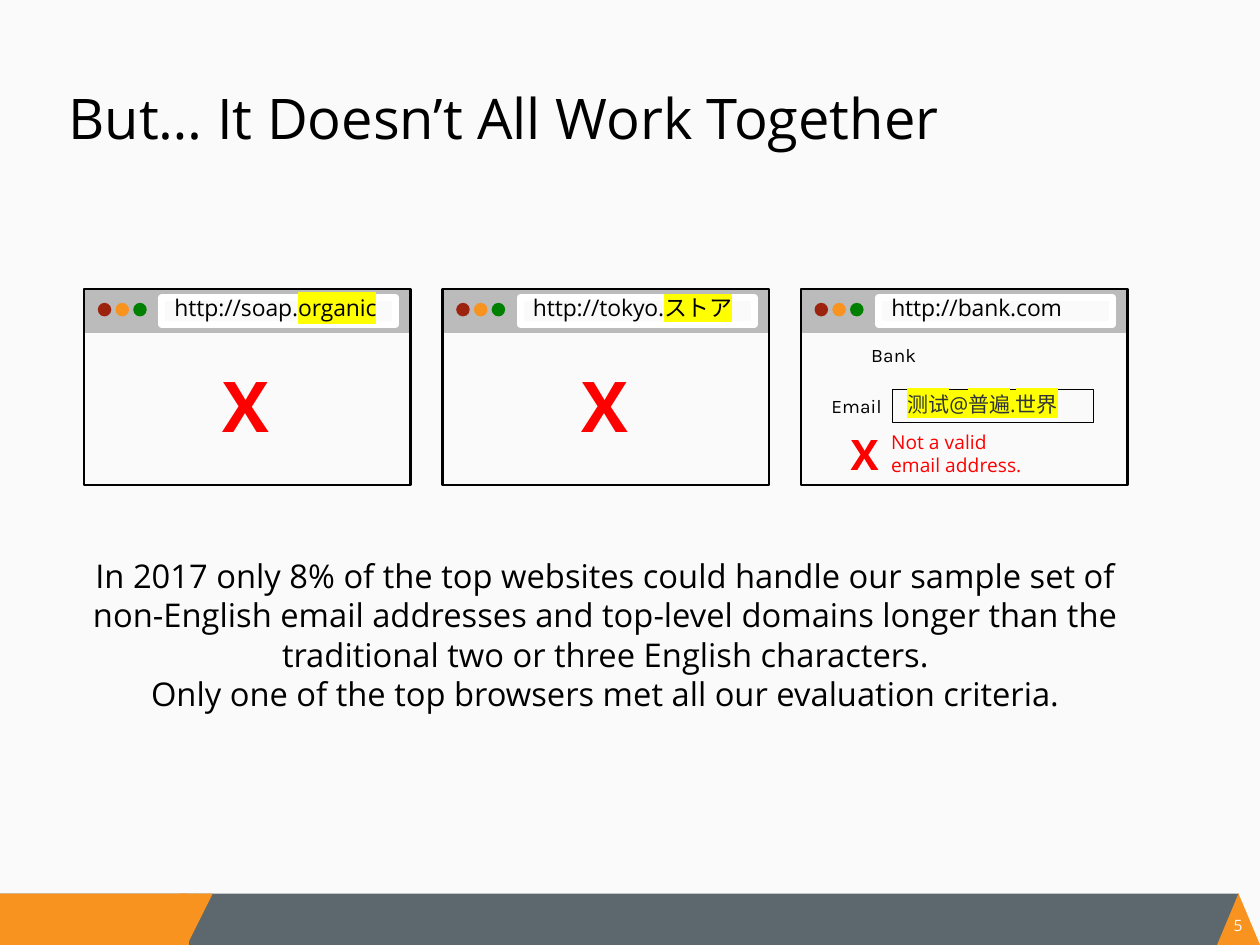
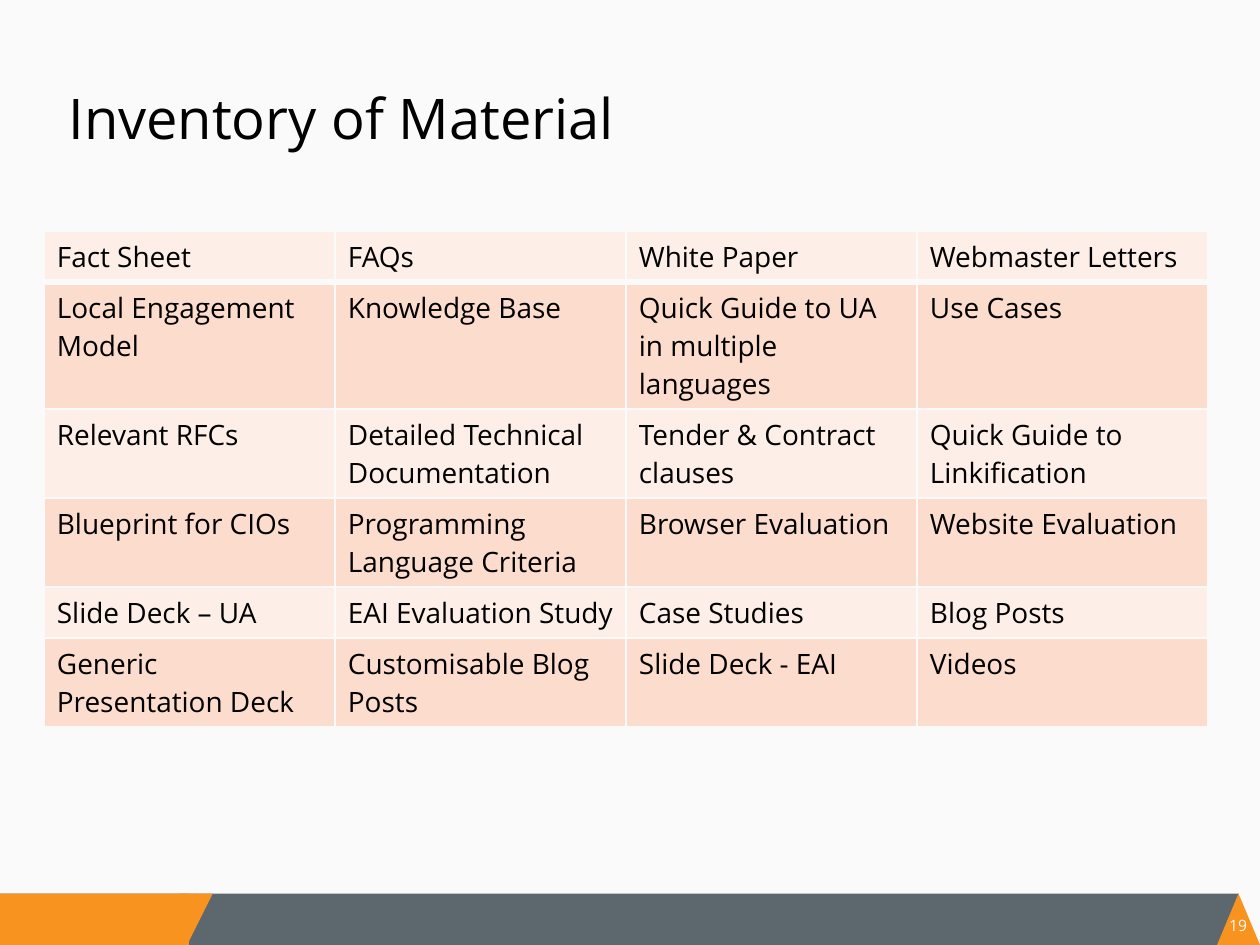
from lxml import etree
from pptx import Presentation, util as u
from pptx.dml.color import RGBColor
from pptx.enum import shapes, text
from pptx.oxml import ns

Pt = u.Pt
Kind = shapes.MSO_SHAPE
Align = text.PP_ALIGN
Anchor = text.MSO_ANCHOR
SANS, KARLA, LATO, CJK = "Open Sans", "Karla", "Lato", "Noto Sans CJK SC"
PALE, GREY, SLATE, ORANGE = "FAFAFA", "BBBBBB", "5D686E", "F7931E"
BLACK, WHITE, RED, MARK = "000000", "FFFFFF", "FF0000", "FFFF00"
FIELD = (5.4, 2.6, 5.4, 5.4)
CROSS = (5.4, 3, 7.2, 3)


def paint(color, code):
    """Set a colour format from a hex string."""
    color.rgb = RGBColor.from_string(code)


def add_hex(parent, tag, code):
    """Append an element that holds one hex colour."""
    node = etree.SubElement(parent, ns.qn(tag))
    etree.SubElement(node, ns.qn("a:srgbClr")).set("val", code)
    return node


def style(run, size, code, font=SANS, bold=False, mark=None):
    """Format one run, with an optional highlight."""
    run.font.size = Pt(size)
    run.font.bold = bold
    paint(run.font.color, code)
    props = run.font._element
    if mark:
        add_hex(props, "a:highlight", mark)
    run.font.name = font
    etree.SubElement(props, ns.qn("a:ea")).set("typeface", font)


def shape(slide, kind, box, fill=None, line=None, width=1):
    """Add a preset shape with plain fill and line."""
    item = slide.shapes.add_shape(kind, *map(Pt, box))
    item.shadow.inherit = False
    if fill:
        item.fill.solid()
        paint(item.fill.fore_color, fill)
    else:
        item.fill.background()
    if line:
        paint(item.line.color, line)
        item.line.width = Pt(width)
    else:
        item.line.fill.background()
    return item


def frame(item, pad, anchor=Anchor.MIDDLE, wrap=True):
    """Set insets, anchor and wrapping, and return the text frame."""
    body = item.text_frame
    body.margin_left, body.margin_top, body.margin_right, body.margin_bottom = map(Pt, pad)
    body.vertical_anchor = anchor
    body.word_wrap = wrap
    return body


def label(slide, box, words, size, code=BLACK, pad=FIELD, anchor=Anchor.MIDDLE,
          wrap=True, align=Align.LEFT, font=SANS, bold=False):
    """Add a text box in one style."""
    body = frame(slide.shapes.add_textbox(*map(Pt, box)), pad, anchor, wrap)
    body.text = words
    for para in body.paragraphs:
        para.alignment = align
        for run in para.runs:
            style(run, size, code, font, bold)


def spell(para, parts, size, code):
    """Fill a paragraph with runs of (words, font, highlight)."""
    para.alignment = Align.LEFT
    for words, font, mark in parts:
        run = para.add_run()
        run.text = words
        style(run, size, code, font, mark=mark)


def footer(slide, page, top=383, high=22):
    """Draw the bottom band and the page number."""
    shape(slide, Kind.RECTANGLE, (0, top, 531, high), SLATE)
    shape(slide, Kind.RECTANGLE, (0, top, 81, high), ORANGE)
    shape(slide, Kind.ISOSCELES_TRIANGLE, (521.6, top, 18.4, high), ORANGE)
    label(slide, (526.3, top + 9.4, 8.6, 8), str(page), 6.75, PALE, (0, 0, 0, 0),
          Anchor.TOP, False, Align.CENTER)
    slant = shape(slide, Kind.PARALLELOGRAM, (72.2, top, 19, high), ORANGE)
    slant.rotation = 180
    slant.adjustments[0] = 0.58
    shape(slide, Kind.RECTANGLE, (77, top, 7.2, 4.3), ORANGE)


def base(deck, title, page):
    """Add a slide with background, footer and title."""
    slide = deck.slides.add_slide(deck.slide_layouts[6])
    fill = slide.background.fill
    fill.solid()
    paint(fill.fore_color, PALE)
    footer(slide, page)
    label(slide, (22.3, 32.2, 499, 67.7), title, 24, pad=(7.2, 3.6, 7.2, 3.6),
          anchor=Anchor.TOP)
    return slide


def window(slide, box, parts):
    """Draw a browser window with its address."""
    left, top, wide, high = box
    shape(slide, Kind.RECTANGLE, (left, top, wide, 18.7), GREY)
    field = shape(slide, Kind.RECTANGLE, (left + 33.4, top + 3.6, 100.3, 11.5), PALE, WHITE, 3)
    spell(frame(field, FIELD).paragraphs[0], parts, 9.75, BLACK)
    shape(slide, Kind.RECTANGLE, box, line=BLACK)
    for col, code in enumerate(("9C240F", ORANGE, "008000")):
        shape(slide, Kind.OVAL, (left + 5.9 + 7.6 * col, top + 5.8, 5.8, 5.8), code)


def cross(slide, box, size):
    """Put a red X in a box."""
    label(slide, box, "X", size, RED, CROSS, Anchor.TOP, False, Align.CENTER, bold=True)


def form(slide, left, top):
    """Draw the bank form with its rejected address."""
    shape(slide, Kind.RECTANGLE, (left + 39.2, top + 43, 86.4, 14.2), line=BLACK, width=0.25)
    label(slide, (left + 4.9, top + 45.6, 35.3, 11.5), "Email", 8.25, align=Align.RIGHT, font=KARLA)
    label(slide, (left + 33.3, top + 63.6, 100, 15.8), "Not a valid\vemail address.", 8.25, RED)
    mail = slide.shapes.add_textbox(*map(Pt, (left + 40.3, top + 42.2, 86.4, 14.4)))
    para = frame(mail, FIELD).paragraphs[0]
    para.line_spacing = 1.2
    parts = ("测试", CJK), ("@", SANS), ("普遍", CJK), (".", SANS), ("世界", CJK)
    spell(para, [(words, font, MARK) for words, font in parts], 9, "2E3437")
    cross(slide, (left + 16, top + 56.7, 23.8, 24.5), 18)
    label(slide, (left + 24.8, top + 23.6, 52.6, 11.5), "Bank", 8.25, font=KARLA)


def failures(deck):
    """Build the slide of three failing browser windows."""
    slide = base(deck, "But… It Doesn’t All Work Together", 5)
    left, top, step, wide, high = 36, 124, 153.6, 140, 84
    sites = (
        [("http://soap.", SANS, None), ("organic", SANS, MARK)],
        [("http://tokyo.", SANS, None), ("ストア", LATO, MARK)],
        [("http://bank.com", SANS, None)],
    )
    for col, parts in enumerate(sites):
        window(slide, (left + step * col, top, wide, high), parts)
    for col in range(2):
        cross(slide, (left + 0.3 + step * col, top + 28.2, wide, 45.4), 30)
    form(slide, left + step * 2, top)
    label(slide, (31, 234.8, 457.2, 75),
          "In 2017 only 8% of the top websites could handle our sample set of "
          "non-English email addresses and top-level domains longer than the "
          "traditional two or three English characters.\n"
          "Only one of the top browsers met all our evaluation criteria.",
          14, pad=(7.2, 3.6, 7.2, 3.6), anchor=Anchor.TOP, align=Align.CENTER)


def edge(cell, row):
    """Draw pale cell borders, thicker under the first row."""
    props = cell._tc.get_or_add_tcPr()
    thick = {"T": row == 1, "B": row == 0}
    for side in "LRTB":
        line = etree.SubElement(props, ns.qn("a:ln" + side))
        line.set("w", str(Pt(3 if thick.get(side) else 1)))
        add_hex(line, "a:solidFill", PALE)


def grid(slide, box, rows, highs):
    """Add a banded table in a box."""
    table = slide.shapes.add_table(len(rows), len(rows[0]), *map(Pt, box)).table
    table.first_row = table.horz_banding = False
    for col in table.columns:
        col.width = Pt(box[2] / len(rows[0]))
    for row, (words, high) in enumerate(zip(rows, highs)):
        table.rows[row].height = Pt(high)
        for col, word in enumerate(words):
            cell = table.cell(row, col)
            edge(cell, row)
            cell.fill.solid()
            paint(cell.fill.fore_color, "FCDCCD" if row % 2 else "FDEEE7")
            cell.margin_left = cell.margin_right = Pt(5.4)
            cell.margin_top = cell.margin_bottom = Pt(2.7)
            cell.text_frame.text = word
            style(cell.text_frame.paragraphs[0].runs[0], 12, BLACK)


def inventory(deck):
    """Build the slide with the table of material."""
    slide = base(deck, "Inventory of Material", 19)
    rows = (
        ("Fact Sheet", "FAQs", "White Paper", "Webmaster Letters"),
        ("Local Engagement Model", "Knowledge Base",
         "Quick Guide to UA in multiple languages", "Use Cases"),
        ("Relevant RFCs", "Detailed Technical Documentation",
         "Tender & Contract clauses", "Quick Guide to Linkification"),
        ("Blueprint for CIOs", "Programming Language Criteria",
         "Browser Evaluation", "Website Evaluation"),
        ("Slide Deck – UA", "EAI Evaluation Study", "Case Studies", "Blog Posts"),
        ("Generic Presentation Deck", "Customisable Blog Posts", "Slide Deck - EAI", "Videos"),
    )
    highs = 21.8, 54.2, 38.2, 38.2, 21.8, 38.2
    grid(slide, (19, 99.2, 499, sum(highs)), rows, highs)


def main():
    """Build and save the deck."""
    deck = Presentation()
    deck.slide_width, deck.slide_height = Pt(540), Pt(405)
    failures(deck)
    inventory(deck)
    deck.save("out.pptx")


if __name__ == "__main__":
    main()
